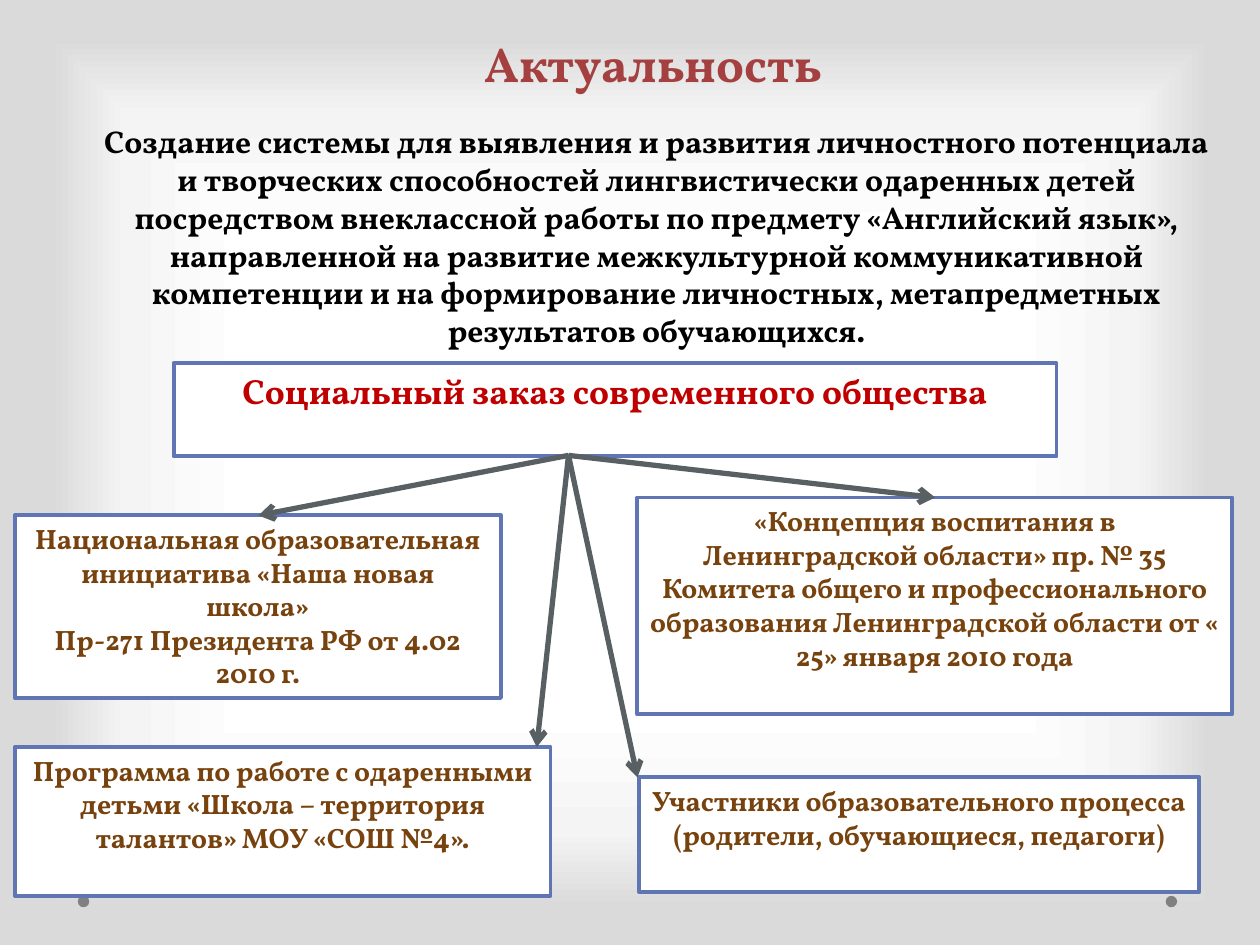
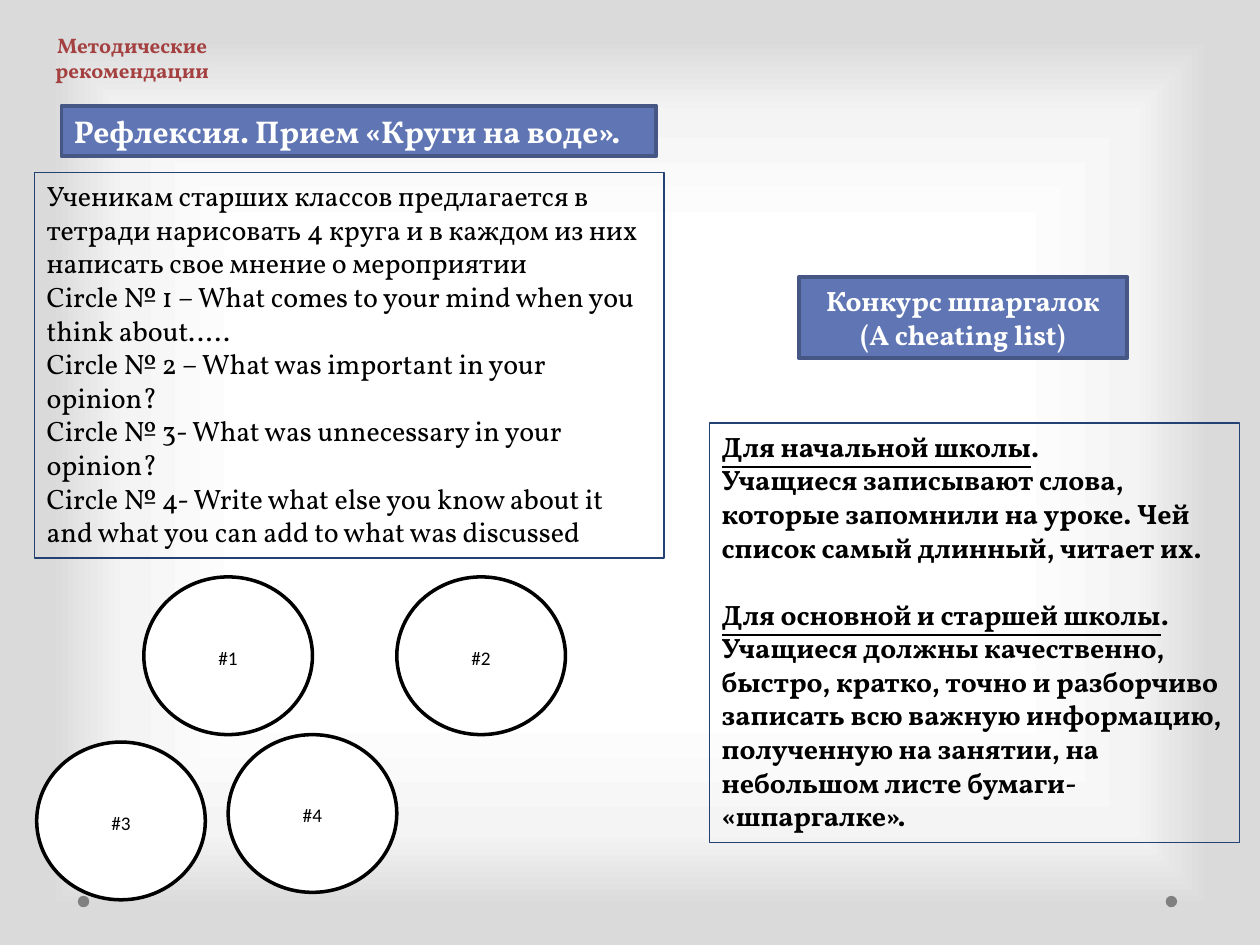
from dataclasses import dataclass

from lxml.etree import SubElement
from pptx import Presentation
from pptx.dml.color import RGBColor as RGB
from pptx.enum.shapes import MSO_CONNECTOR as CONN, MSO_SHAPE as SHAPE
from pptx.enum.text import MSO_ANCHOR as ANCHOR, PP_ALIGN as ALIGN
from pptx.oxml import parse_xml
from pptx.oxml.ns import nsdecls, qn
from pptx.util import Cm, Pt


@dataclass(frozen=True)
class Theme:
    serif: str = "Vollkorn"
    sans: str = "Calibri"
    white: str = "FFFFFF"
    black: str = "000000"
    blue: str = "6076B4"
    blue_edge: str = "475785"
    navy: str = "234271"
    title: str = "A54040"
    red: str = "C00000"
    brown: str = "77420D"
    arrow: str = "586064"
    dot: str = "808080"
    backdrop: tuple = ((50, "FFFFFF"), (76, "F4F4F4"), (92, "DADADA"))
    title_size: float = 28
    heading_size: float = 20
    lead_size: float = 18
    body_size: float = 16
    label_size: float = 12
    circle_size: float = 11
    frame: float = 2.25
    hairline: float = 0.75
    ring: float = 2
    arrow_width: float = 3


T = Theme()


@dataclass(frozen=True)
class Style:
    size: float = T.body_size
    color: str = T.black
    bold: bool = True
    align: ALIGN = ALIGN.CENTER
    font: str = T.serif


TITLE = Style(T.title_size, T.title)
LABEL = Style(T.label_size, T.title)
LEAD = Style(T.lead_size)
HEADING = Style(T.heading_size, T.red)
SOURCE = Style(color=T.brown)
BANNER = Style(T.lead_size, T.white, align=ALIGN.LEFT)
CONTEST = Style(color=T.white)
PLAIN = Style(bold=False, align=ALIGN.LEFT)
STRONG = Style(align=ALIGN.LEFT)
CIRCLE = Style(T.circle_size, bold=False, font=T.sans)


def set_backdrop(master):
    master.background.fill.solid()
    bg_pr = master.element.cSld.bg.bgPr
    stops = "".join(
        f'<a:gs pos="{pos * 1000}"><a:srgbClr val="{color}"/></a:gs>'
        for pos, color in T.backdrop)
    gradient = parse_xml(
        f'<a:gradFill {nsdecls("a")} rotWithShape="1"><a:gsLst>{stops}</a:gsLst>'
        '<a:path path="shape"><a:fillToRect l="50000" t="50000" r="50000" b="50000"/>'
        '</a:path></a:gradFill>')
    bg_pr.replace(bg_pr.find(qn("a:solidFill")), gradient)


def write(tf, paragraphs, style):
    tf.word_wrap = True
    tf.vertical_anchor = ANCHOR.TOP
    for i, runs in enumerate(paragraphs):
        p = tf.paragraphs[0] if i == 0 else tf.add_paragraph()
        p.alignment = style.align
        for text, underline in [(runs, False)] if isinstance(runs, str) else runs:
            r = p.add_run()
            r.text = text
            font = r.font
            font.name = style.font
            font.size = Pt(style.size)
            font.bold = style.bold
            font.underline = underline
            font.color.rgb = RGB.from_string(style.color)


def add_text(slide, box, paragraphs, style):
    s = slide.shapes.add_textbox(*map(Cm, box))
    write(s.text_frame, paragraphs, style)
    return s


def add_figure(slide, kind, box, fill=None, line=None, width=T.frame):
    s = slide.shapes.add_shape(kind, *map(Cm, box))
    s.shadow.inherit = False
    if fill:
        s.fill.solid()
        s.fill.fore_color.rgb = RGB.from_string(fill)
    else:
        s.fill.background()
    if line:
        s.line.color.rgb = RGB.from_string(line)
        s.line.width = Pt(width)
    else:
        s.line.fill.background()
    return s


def add_panel(slide, box, paragraphs, style, fill=None, line=T.blue, width=T.frame):
    s = add_figure(slide, SHAPE.RECTANGLE, box, fill, line, width)
    write(s.text_frame, paragraphs, style)
    return s


def add_circle(slide, left, top, label):
    s = add_figure(slide, SHAPE.OVAL, (left, top, 3.4, 3.18), T.white, T.black, T.ring)
    write(s.text_frame, [label], CIRCLE)
    s.text_frame.vertical_anchor = ANCHOR.MIDDLE
    p = s.text_frame.paragraphs[0]
    p.line_spacing = 1.15
    p.space_after = Pt(10)


def add_arrow(slide, start, end):
    c = slide.shapes.add_connector(CONN.STRAIGHT, *map(Cm, start + end))
    c.line.color.rgb = RGB.from_string(T.arrow)
    c.line.width = Pt(T.arrow_width)
    SubElement(c.line._get_or_add_ln(), qn("a:tailEnd"), type="arrow")
    SubElement(c._element.spPr, qn("a:effectLst"))


def new_slide(prs):
    slide = prs.slides.add_slide(prs.slide_layouts[6])
    for left in (23.5, 1.57):
        add_figure(slide, SHAPE.OVAL, (left, 18.06, 0.23, 0.23), T.dot)
    return slide


def build_relevance(prs):
    slide = new_slide(prs)
    add_text(slide, (7.5, 0.56, 11.35, 1.45), ["Актуальность"], TITLE)
    add_text(slide, (1.73, 2.34, 23.01, 4.88), [
        "Создание системы для выявления и развития личностного потенциала и "
        "творческих способностей лингвистически одаренных детей посредством "
        "внеклассной работы по предмету «Английский язык», направленной на "
        "развитие межкультурной коммуникативной компетенции и на формирование "
        "личностных, метапредметных результатов обучающихся."], LEAD)
    add_panel(slide, (3.5, 7.32, 17.8, 1.88),
              ["Социальный заказ современного общества"], HEADING, T.white)

    sources = [
        ((0.3, 10.39, 9.8, 3.68), 5.21, [
            "Национальная образовательная инициатива «Наша новая школа»",
            "Пр-271 Президента РФ от 4.02 2010 г."]),
        ((12.85, 10.03, 11.99, 4.37), 18.85, [
            "«Концепция воспитания в Ленинградской области» пр. № 35 Комитета "
            "общего и профессионального образования Ленинградской области "
            "от « 25» января 2010 года"]),
        ((0.3, 15.06, 10.8, 3), 10.82, [
            "Программа по работе с одаренными детьми «Школа – территория "
            "талантов» МОУ «СОШ №4»."]),
        ((12.88, 15.67, 11.3, 2.31), 12.85, [
            "Участники образовательного процесса",
            "(родители, обучающиеся, педагоги)"]),
    ]
    hub = (11.46, 9.18)
    for box, arrow_x, paragraphs in sources:
        add_panel(slide, box, paragraphs, SOURCE, T.white)
        add_arrow(slide, hub, (arrow_x, box[1]))


def build_methods(prs):
    slide = new_slide(prs)
    add_text(slide, (0.71, 0.53, 3.91, 1.27), ["Методические", "рекомендации"], LABEL)
    add_panel(slide, (1.24, 2.13, 11.99, 1.02),
              ["Рефлексия. Прием «Круги на воде»."], BANNER, T.blue, T.blue_edge)
    add_panel(slide, (0.69, 3.48, 12.7, 7.77), [
        "Ученикам старших классов предлагается в тетради нарисовать 4 круга и "
        "в каждом из них написать свое мнение о мероприятии",
        "Circle № 1 – What comes to your mind when you think about…..",
        "Circle № 2 – What was important in your opinion?",
        "Circle № 3- What was unnecessary in your opinion?",
        "Circle № 4- Write what else you know about it and what you can add to "
        "what was discussed"], PLAIN, line=T.navy, width=T.hairline)
    circles = [(2.9, 11.63), (8, 11.63), (0.74, 14.96), (4.6, 14.81)]
    for number, (left, top) in enumerate(circles, 1):
        add_circle(slide, left, top, f"#{number}")

    add_panel(slide, (16.1, 5.59, 6.63, 1.63),
              ["Конкурс шпаргалок", "(A cheating list)"], CONTEST, T.blue, T.blue_edge)
    tasks = add_panel(slide, (14.3, 8.53, 10.69, 8.46), [
        [("Для начальной школы", True), (".", False)],
        "Учащиеся записывают слова, которые запомнили на уроке. Чей список "
        "самый длинный, читает их.",
        [("Для основной и старшей школы", True), (".", False)],
        "Учащиеся должны качественно, быстро, кратко, точно и разборчиво "
        "записать всю важную информацию, полученную на занятии, на небольшом "
        "листе бумаги- «шпаргалке»."], STRONG, line=T.navy, width=T.hairline)
    tasks.text_frame.paragraphs[2].space_before = Pt(19.2)


def main():
    prs = Presentation()
    prs.slide_width, prs.slide_height = Cm(25.4), Cm(19.05)
    set_backdrop(prs.slide_master)
    build_relevance(prs)
    build_methods(prs)
    prs.save("out.pptx")


if __name__ == "__main__":
    main()
